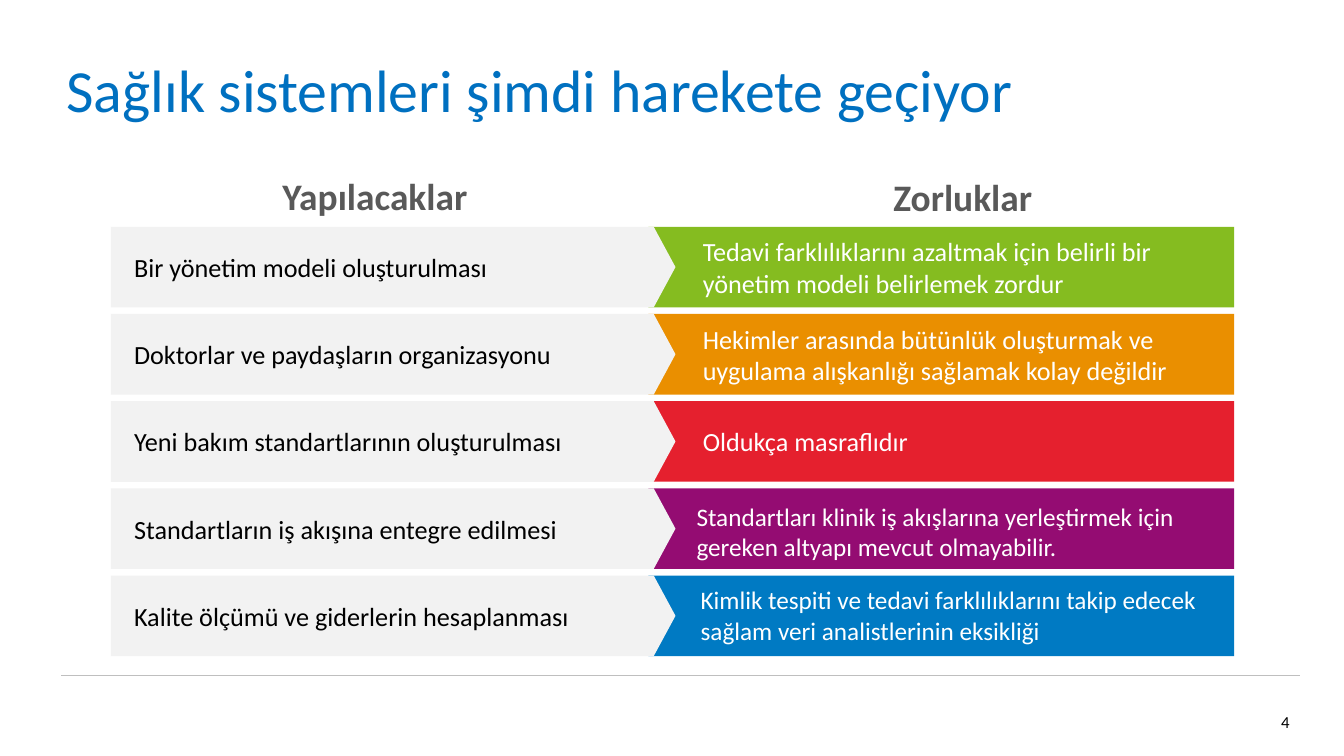
from lxml import etree
from pptx import Presentation
from pptx.dml.color import RGBColor
from pptx.enum.shapes import MSO_CONNECTOR, MSO_SHAPE
from pptx.enum.text import MSO_ANCHOR, MSO_AUTO_SIZE, PP_ALIGN
from pptx.oxml.ns import qn
from pptx.util import Inches, Pt

RECTANGLE, PENTAGON = MSO_SHAPE.RECTANGLE, MSO_SHAPE.PENTAGON
STRAIGHT = MSO_CONNECTOR.STRAIGHT
TOP, MIDDLE = MSO_ANCHOR.TOP, MSO_ANCHOR.MIDDLE
LEFT, CENTER, RIGHT = PP_ALIGN.LEFT, PP_ALIGN.CENTER, PP_ALIGN.RIGHT
NO_AUTOFIT = MSO_AUTO_SIZE.NONE

FONT = "Calibri"
TITLE_BLUE, HEADING_GRAY, RULE_GRAY = "0070C0", "595959", "BFBFBF"
STEP_GRAY, BLACK, WHITE = "F2F2F2", "000000", "FFFFFF"

# Step, challenge, challenge colour, own text box (left, top within the bar) or None
ROWS = [
    ("Bir yönetim modeli oluşturulması",
     "Tedavi farklılıklarını azaltmak için belirli bir yönetim modeli belirlemek zordur",
     "85BC20", None),
    ("Doktorlar ve paydaşların organizasyonu",
     "Hekimler arasında bütünlük oluşturmak ve uygulama alışkanlığı sağlamak kolay değildir",
     "EA8F00", None),
    ("Yeni bakım standartlarının oluşturulması", "Oldukça masraflıdır",
     "E5202E", None),
    ("Standartların iş akışına entegre edilmesi",
     "Standartları klinik iş akışlarına yerleştirmek için gereken altyapı mevcut olmayabilir.",
     "940C72", (0.38, 0.08)),
    ("Kalite ölçümü ve giderlerin hesaplanması",
     "Kimlik tespiti ve tedavi farklılıklarını takip edecek sağlam veri analistlerinin eksikliği",
     "007AC3", (0.42, 0.04)),
]
ROW_HEIGHT = 0.8
STEP_WIDTH = 5.6
CHALLENGE_OFFSET, CHALLENGE_WIDTH = 5.33, 5.81


def rgb(color):
    return RGBColor.from_string(color)


def write(frame, text, size, color, align=LEFT, anchor=MIDDLE, bold=False):
    frame.word_wrap = True
    frame.vertical_anchor = anchor
    paragraph = frame.paragraphs[0]
    paragraph.text = text
    paragraph.alignment = align
    font = paragraph.runs[0].font
    font.name, font.size, font.bold = FONT, Pt(size), bold
    font.color.rgb = rgb(color)


def add_label(slide, box, text, size, color, **layout):
    label = slide.shapes.add_textbox(*map(Inches, box))
    write(label.text_frame, text, size, color, **layout)
    return label


def add_bar(slide, preset, box, fill):
    bar = slide.shapes.add_shape(preset, *map(Inches, box))
    bar.shadow.inherit = False
    bar.fill.solid()
    bar.fill.fore_color.rgb = rgb(fill)
    bar.line.fill.background()
    return bar


def add_title(slide, box, text):
    title = slide.shapes.title
    title.left, title.top, title.width, title.height = map(Inches, box)
    frame = title.text_frame
    frame.auto_size = NO_AUTOFIT
    frame.margin_left = frame.margin_right = Inches(0.05)
    write(frame, text, 42.7, TITLE_BLUE)


def add_heading(slide, box, text):
    heading = add_label(slide, box, text, 26.7, HEADING_GRAY,
                        align=CENTER, anchor=TOP, bold=True)
    heading.text_frame.paragraphs[0].line_spacing = 0.9


def add_challenge(slide, left, top, text, color, text_offset):
    box = (left, top, CHALLENGE_WIDTH, ROW_HEIGHT)
    challenge = add_bar(slide, RECTANGLE, box, color)
    if text_offset:
        dx, dy = text_offset
        add_label(slide, (left + dx, top + dy, 5.21, 0.71), text, 18, WHITE, anchor=TOP)
    else:
        challenge.text_frame.margin_left = Inches(0.54)
        write(challenge.text_frame, text, 18.7, WHITE)


def add_step(slide, left, top, text):
    step = add_bar(slide, PENTAGON, (left, top, STEP_WIDTH, ROW_HEIGHT), STEP_GRAY)
    step.adjustments[0] = 0.27
    step.text_frame.margin_left = Inches(0.23)
    write(step.text_frame, text, 18.7, BLACK)


def add_rows(slide, left, top, height):
    pitch = (height - ROW_HEIGHT) / (len(ROWS) - 1)
    for index, (step, challenge, color, text_offset) in enumerate(ROWS):
        row_top = top + index * pitch
        # The step's arrow point overlaps the challenge bar
        add_challenge(slide, left + CHALLENGE_OFFSET, row_top, challenge, color, text_offset)
        add_step(slide, left, row_top, step)


def add_footer(slide, left, top, width, number):
    ends = map(Inches, (left, top, left + width, top))
    rule = slide.shapes.add_connector(STRAIGHT, *ends)
    rule.line.color.rgb = rgb(RULE_GRAY)
    rule.line.width = Pt(1)
    etree.SubElement(rule._element.spPr, qn("a:effectLst"))
    add_label(slide, (left + width - 0.71, top + 0.26, 0.71, 0.4),
              number, 12, BLACK, align=RIGHT)


def main():
    prs = Presentation()
    prs.slide_width, prs.slide_height = Inches(13.33), Inches(7.5)
    slide = prs.slides.add_slide(prs.slide_layouts[5])

    add_footer(slide, 0.61, 6.7, 12.28, "4")
    add_title(slide, (0.61, 0.25, 12.28, 1.25), "Sağlık sistemleri şimdi harekete geçiyor")
    # Column headings and the paired bars below them
    add_heading(slide, (2.4, 1.72, 2.64, 0.48), "Yapılacaklar")
    add_heading(slide, (7.12, 1.73, 4.86, 0.48), "Zorluklar")
    add_rows(slide, 1.1, 2.25, 4.26)

    prs.save("out.pptx")


if __name__ == "__main__":
    main()
